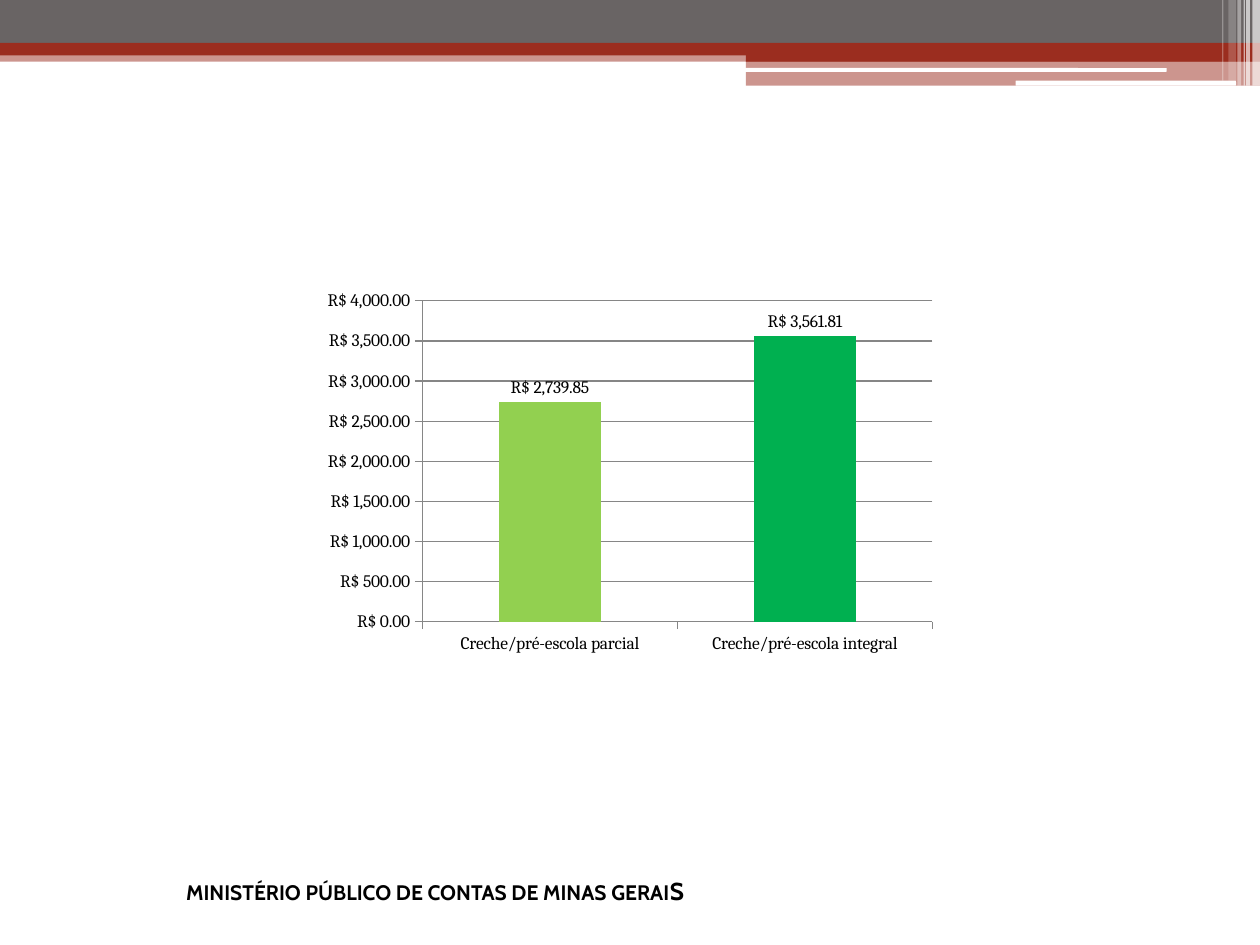
from lxml import etree
from pptx import Presentation
from pptx.chart.data import CategoryChartData
from pptx.dml.color import RGBColor
from pptx.enum.chart import XL_CHART_TYPE, XL_LABEL_POSITION, XL_TICK_MARK
from pptx.enum.shapes import MSO_SHAPE
from pptx.oxml.ns import qn
from pptx.util import Inches, Pt

RECTANGLE = MSO_SHAPE.RECTANGLE
ROUNDED = MSO_SHAPE.ROUNDED_RECTANGLE
COLUMN_CLUSTERED = XL_CHART_TYPE.COLUMN_CLUSTERED
OUTSIDE_END = XL_LABEL_POSITION.OUTSIDE_END
TICK_OUTSIDE = XL_TICK_MARK.OUTSIDE

COLORS = {
    "gray": "696464",
    "red": "9B2D1F",
    "white": "FFFFFF",
    "black": "000000",
    "axis": "868686",
    "series": "D34817",
    "partial": "92D050",
    "full": "00B050",
}
CURRENCY = '"R$"\\ #,##0.00;[Red]\\-"R$"\\ #,##0.00'


def color(name):
    return RGBColor.from_string(COLORS[name])


def add_block(slide, box, fill, opacity=100, kind=RECTANGLE):
    shape = slide.shapes.add_shape(kind, *map(Inches, box))
    shape.shadow.inherit = False
    shape.line.fill.background()
    shape.fill.solid()
    shape.fill.fore_color.rgb = color(fill)
    if opacity < 100:
        fill_color = shape.fill._xPr.find(qn("a:solidFill"))[0]
        etree.SubElement(fill_color, qn("a:alpha"), val=str(opacity * 1000))


def add_header(slide, left, top, width):
    step_left = left + 5.92
    step_width = width - 5.92
    add_block(slide, (left, top + 0.4, width, 0.09), "red", 50)
    add_block(slide, (left, top, width, 0.34), "gray")
    add_block(slide, (left, top + 0.34, width, 0.1), "red")
    add_block(slide, (step_left, top + 0.39, step_width, 0.1), "red")
    add_block(slide, (step_left, top + 0.48, step_width, 0.2), "red", 50)
    add_block(slide, (left + 5.91, top + 0.54, 3.35, 0.03), "white", kind=ROUNDED)
    add_block(slide, (left + 8.06, top + 0.64, 1.75, 0.04), "white", kind=ROUNDED)
    stripes = [
        (9.94, 0.06, 0.68, 65),
        (9.89, 0.03, 0.68, 65),
        (9.87, 0.01, 0.68, 60),
        (9.82, 0.03, 0.68, 40),
        (9.75, 0.06, 0.64, 20),
        (9.7, 0.01, 0.64, 30),
    ]
    for offset, stripe_width, height, opacity in stripes:
        add_block(slide, (left + offset, top, stripe_width, height), "white", opacity)


def add_footer(slide, box):
    text_frame = slide.shapes.add_textbox(*map(Inches, box)).text_frame
    text_frame.word_wrap = True
    paragraph = text_frame.paragraphs[0]
    for text, size in (("MINISTÉRIO PÚBLICO DE CONTAS DE MINAS GERAI", 12), ("S", 14)):
        run = paragraph.add_run()
        run.text = text
        run.font.name = "Cabin"
        run.font.size = Pt(size)
        run.font.bold = True
        run.font.color.rgb = color("black")


def style_axis(axis):
    axis.major_tick_mark = TICK_OUTSIDE
    axis.minor_tick_mark = XL_TICK_MARK.NONE
    axis.format.line.color.rgb = color("axis")
    axis.format.line.width = Pt(0.75)


def add_cost_chart(slide, box):
    data = CategoryChartData(number_format=CURRENCY)
    data.categories = ["Creche/pré-escola parcial", "Creche/pré-escola integral"]
    data.add_series("Series 1", (2739.85, 3561.81))
    chart = slide.shapes.add_chart(COLUMN_CLUSTERED, *map(Inches, box), data).chart
    chart.has_title = False
    chart.has_legend = False
    chart.font.name = "Cambria"
    chart.font.size = Pt(10)
    chart.font.color.rgb = color("black")

    style_axis(chart.category_axis)
    value_axis = chart.value_axis
    style_axis(value_axis)
    value_axis.minimum_scale = 0
    value_axis.maximum_scale = 4000
    value_axis.major_unit = 500
    value_axis.tick_labels.number_format = CURRENCY
    value_axis.tick_labels.number_format_is_linked = False
    value_axis.has_major_gridlines = True
    gridline = value_axis.major_gridlines.format.line
    gridline.color.rgb = color("axis")
    gridline.width = Pt(0.75)

    plot = chart.plots[0]
    plot.gap_width = 150
    plot.vary_by_categories = False
    series = plot.series[0]
    series.format.fill.solid()
    series.format.fill.fore_color.rgb = color("series")
    for index, name in enumerate(("partial", "full")):
        fill = series.points[index].format.fill
        fill.solid()
        fill.fore_color.rgb = color(name)
    labels = series.data_labels
    labels.show_value = True
    labels.position = OUTSIDE_END
    labels.number_format = CURRENCY
    labels.number_format_is_linked = False


def main():
    presentation = Presentation()
    presentation.slide_width = Inches(10)
    presentation.slide_height = Inches(7.5)
    slide = presentation.slides.add_slide(presentation.slide_layouts[6])
    add_header(slide, 0, 0, 10)
    add_footer(slide, (1.38, 6.9, 7.64, 0.34))
    add_cost_chart(slide, (2.5, 2.25, 5, 3))
    presentation.save("out.pptx")


if __name__ == "__main__":
    main()
